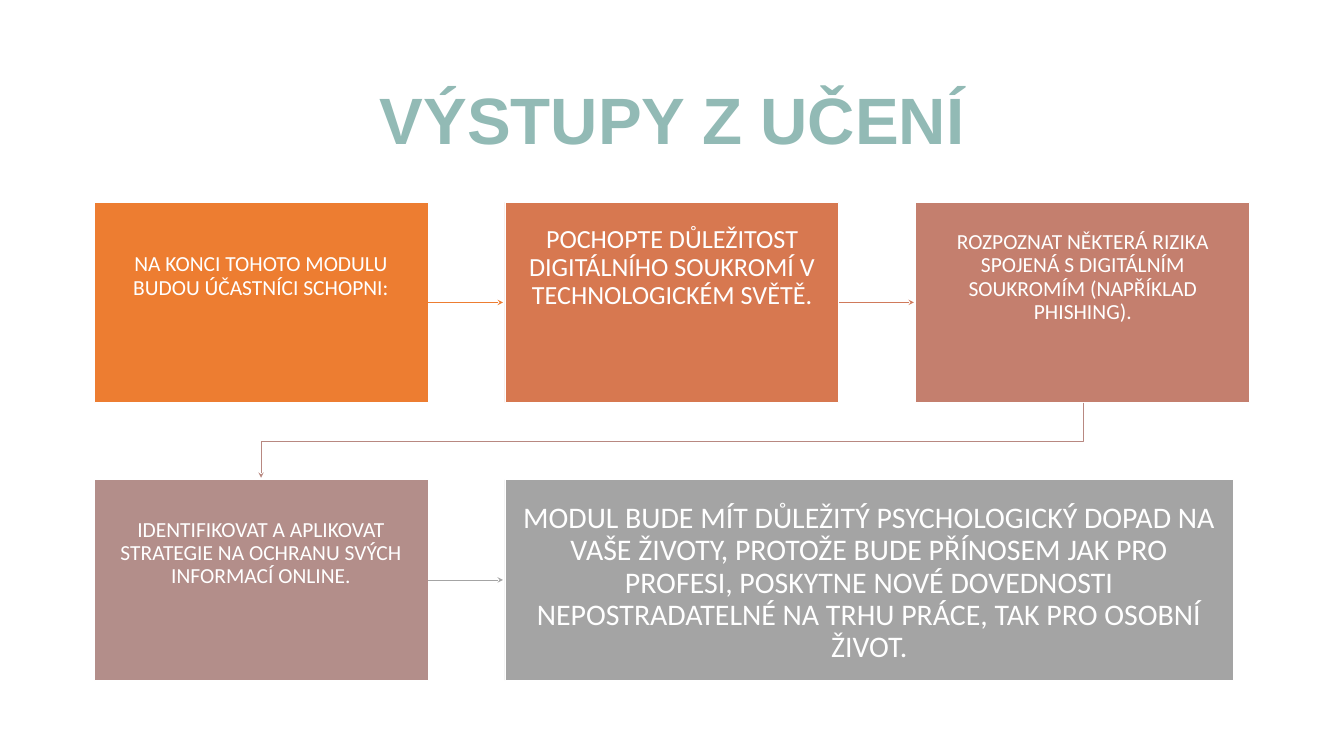
from lxml.etree import SubElement
from pptx import Presentation
from pptx.dml.color import RGBColor
from pptx.enum.shapes import MSO_CONNECTOR as Line, MSO_SHAPE as Preset
from pptx.enum.text import MSO_ANCHOR as Anchor, PP_ALIGN as Align
from pptx.oxml.ns import qn
from pptx.util import Inches, Pt

WHITE = RGBColor(0xFF, 0xFF, 0xFF)
TEAL = RGBColor(0x92, 0xBA, 0xB5)
ORANGE = RGBColor(0xED, 0x7D, 0x31)
RUST = RGBColor(0xD7, 0x78, 0x50)
RUST_LINE = RGBColor(0xD0, 0x7A, 0x5B)
CLAY = RGBColor(0xC4, 0x7F, 0x6E)
CLAY_LINE = RGBColor(0xB8, 0x88, 0x81)
MAUVE = RGBColor(0xB3, 0x8E, 0x8A)
GREY = RGBColor(0xA4, 0xA4, 0xA4)

LEFT, TOP = 1.4, 3.01
COLUMN, ROW = 6.115, 4.13
STEP_WIDTH, STEP_HEIGHT = 4.97, 2.98
GAP = 0.03

STEPS = [
    (0, 0, STEP_WIDTH, ORANGE, 23, 0.76,
     "NA KONCI TOHOTO MODULU BUDOU ÚČASTNÍCI SCHOPNI:"),
    (1, 0, STEP_WIDTH, RUST, 28, 0.35,
     "POCHOPTE DŮLEŽITOST DIGITÁLNÍHO SOUKROMÍ V TECHNOLOGICKÉM SVĚTĚ."),
    (2, 0, STEP_WIDTH, CLAY, 23, 0.43,
     "ROZPOZNAT NĚKTERÁ RIZIKA SPOJENÁ S DIGITÁLNÍM SOUKROMÍM (NAPŘÍKLAD PHISHING)."),
    (0, 1, STEP_WIDTH, MAUVE, 23, 0.58,
     "IDENTIFIKOVAT A APLIKOVAT STRATEGIE NA OCHRANU SVÝCH INFORMACÍ ONLINE."),
    (1, 1, 10.84, GREY, 32, 0.34,
     "MODUL BUDE MÍT DŮLEŽITÝ PSYCHOLOGICKÝ DOPAD NA VAŠE ŽIVOTY, PROTOŽE BUDE "
     "PŘÍNOSEM JAK PRO PROFESI, POSKYTNE NOVÉ DOVEDNOSTI NEPOSTRADATELNÉ NA TRHU "
     "PRÁCE, TAK PRO OSOBNÍ ŽIVOT."),
]
ARROWS = [(0, 0, ORANGE), (1, 0, RUST_LINE), (0, 1, GREY)]


def write(frame, text, *, size, font, color, bold=False, anchor=Anchor.TOP,
          side=0.2, top=0.05, bottom=0.05):
    frame.word_wrap = True
    frame.vertical_anchor = anchor
    frame.margin_left = frame.margin_right = Inches(side)
    frame.margin_top, frame.margin_bottom = Inches(top), Inches(bottom)
    paragraph = frame.paragraphs[0]
    paragraph.alignment = Align.CENTER
    paragraph.line_spacing = 0.9
    run = paragraph.add_run()
    run.text = text
    run.font.size, run.font.name, run.font.bold = Pt(size), font, bold
    run.font.color.rgb = color


class FlowSlide:
    heading_font, body_font = "Arial", "Calibri"

    def __init__(self, deck):
        self.slide = deck.slides.add_slide(deck.slide_layouts[6])
        self.shapes = self.slide.shapes

    def corner(self, column, row):
        return LEFT + column * COLUMN, TOP + row * ROW

    def title(self, text):
        heading = self.shapes.add_textbox(*map(Inches, (1.38, 0.91, 17.25, 1.86)))
        write(heading.text_frame, text, size=70.2, font=self.heading_font,
              color=TEAL, bold=True, anchor=Anchor.MIDDLE, side=0.1)

    def step(self, column, row, width, fill, size, top, text):
        x, y = self.corner(column, row)
        step = self.shapes.add_shape(
            Preset.RECTANGLE, *map(Inches, (x, y, width, STEP_HEIGHT)))
        step.shadow.inherit = False
        step.fill.solid()
        step.fill.fore_color.rgb = fill
        step.line.color.rgb = WHITE
        step.line.width = Pt(1)
        write(step.text_frame, text, size=size, font=self.body_font,
              color=WHITE, top=top)

    def arrowhead(self, arrow, color):
        arrow.line.color.rgb = color
        arrow.line.width = Pt(0.75)
        SubElement(arrow.line._get_or_add_ln(), qn("a:tailEnd"), type="stealth")

    def arrow(self, column, row, color):
        x, y = self.corner(column, row)
        middle = y + STEP_HEIGHT / 2
        arrow = self.shapes.add_connector(
            Line.STRAIGHT, Inches(x + STEP_WIDTH), Inches(middle),
            Inches(x + COLUMN - GAP), Inches(middle))
        self.arrowhead(arrow, color)
        SubElement(arrow._element.spPr, qn("a:effectLst"))

    def row_return(self, color):
        start_x, start_y = self.corner(2, 0)
        end_x, end_y = self.corner(0, 1)
        start_x, end_x = start_x + STEP_WIDTH / 2, end_x + STEP_WIDTH / 2
        start_y, end_y = start_y + STEP_HEIGHT, end_y - GAP
        bend = (start_y + end_y + GAP) / 2
        route = self.shapes.build_freeform(Inches(start_x), Inches(start_y))
        corners = [(start_x, bend), (end_x, bend), (end_x, end_y)]
        route.add_line_segments(
            [(Inches(x), Inches(y)) for x, y in corners], close=False)
        arrow = route.convert_to_shape()
        arrow.shadow.inherit = False
        arrow.fill.background()
        self.arrowhead(arrow, color)


def main():
    deck = Presentation()
    deck.slide_width, deck.slide_height = Inches(20), Inches(11.25)
    outcomes = FlowSlide(deck)
    outcomes.title("VÝSTUPY Z UČENÍ")
    for step in STEPS:
        outcomes.step(*step)
    for arrow in ARROWS:
        outcomes.arrow(*arrow)
    outcomes.row_return(CLAY_LINE)
    deck.save("out.pptx")


if __name__ == "__main__":
    main()
